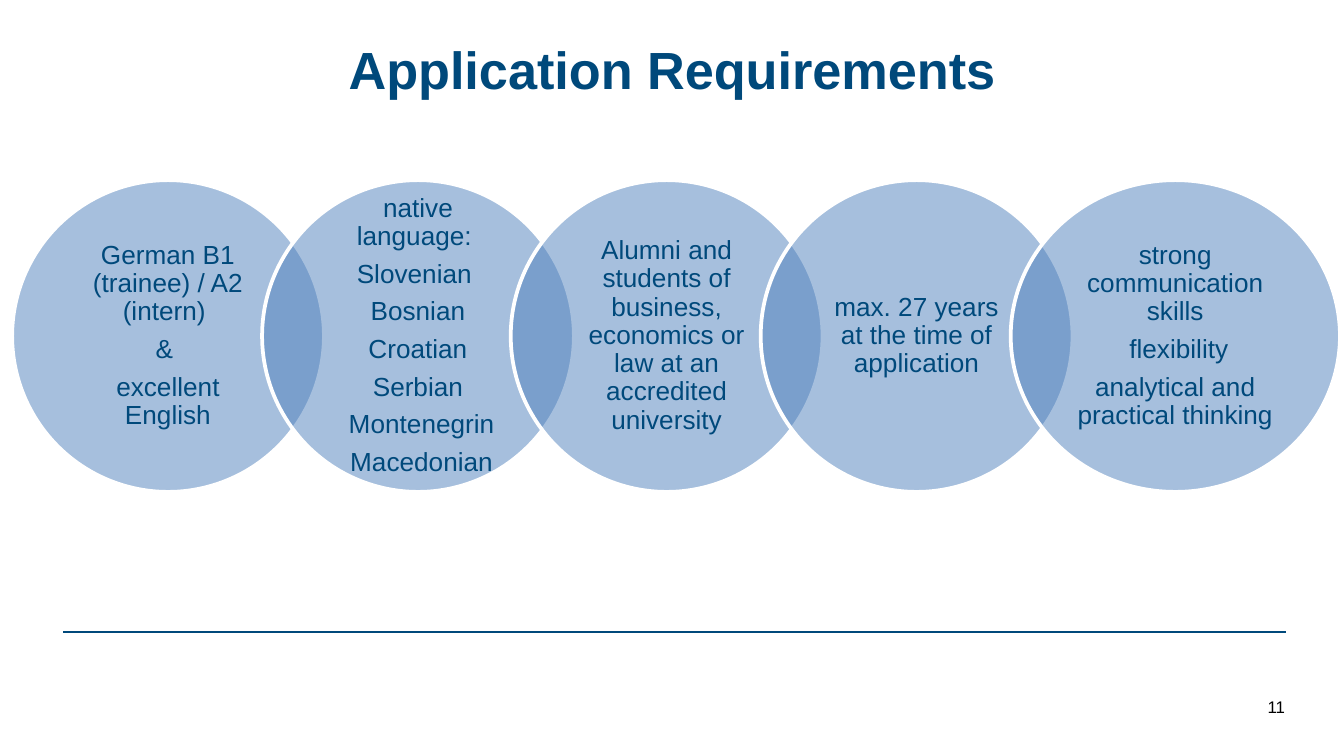
from dataclasses import dataclass

import pptx
import pptx.dml.color
import pptx.enum.shapes
import pptx.enum.text
import pptx.oxml.ns
import pptx.util
from lxml import etree

PX = 9144  # EMU per px, 100 px to the inch
SLIDE_WIDTH = 1000
Align = pptx.enum.text.PP_ALIGN
Anchor = pptx.enum.text.MSO_ANCHOR


@dataclass(frozen=True)
class Theme:
    font: str = "Arial"
    navy: str = "00497B"
    blue: str = "4F81BD"
    white: str = "FFFFFF"
    black: str = "000000"
    title_size: int = 28
    body_size: int = 14
    number_size: int = 9
    circle_opacity: int = 50


@dataclass(frozen=True)
class Box:
    left: int
    top: int
    width: int
    height: int

    def emu(self) -> tuple[int, ...]:
        return tuple(v * PX for v in (self.left, self.top, self.width, self.height))

    def inscribed(self) -> "Box":
        """The rectangle that fits inside the ellipse drawn in this box."""
        dx = round(self.width * (1 - 0.5 ** 0.5) / 2)
        dy = round(self.height * (1 - 0.5 ** 0.5) / 2)
        return Box(self.left + dx, self.top + dy, self.width - 2 * dx, self.height - 2 * dy)


@dataclass(frozen=True)
class Requirement:
    lines: tuple[str, ...]
    width: int = 232


@dataclass(frozen=True)
class TextStyle:
    size: int
    color: str
    align: Align
    anchor: Anchor
    bold: bool = False
    line_spacing: float = 1.0
    space_after: int = 0
    insets: tuple[int, int] = (10, 5)  # sides, top and bottom


THEME = Theme()
TITLE = TextStyle(THEME.title_size, THEME.navy, Align.CENTER, Anchor.TOP, bold=True)
BODY = TextStyle(THEME.body_size, THEME.navy, Align.CENTER, Anchor.MIDDLE,
                 line_spacing=0.9, space_after=5, insets=(13, 2))
NUMBER = TextStyle(THEME.number_size, THEME.black, Align.RIGHT, Anchor.MIDDLE)

REQUIREMENTS = (
    Requirement(("German B1 (trainee) / A2 (intern) ", "& ", "excellent English")),
    Requirement(("native language: ", "Slovenian ", "Bosnian", "Croatian", "Serbian",
                 " Montenegrin", " Macedonian")),
    Requirement(("Alumni and students of business, economics or law at an accredited university",)),
    Requirement(("max. 27 years at the time of application",)),
    Requirement(("strong communication skills", " flexibility",
                 "analytical and practical thinking"), width=245),
)
FIRST_LEFT, CIRCLE_TOP, CIRCLE_HEIGHT, CIRCLE_STEP = 9, 134, 232, 185.75


def rgb(color: str) -> pptx.dml.color.RGBColor:
    return pptx.dml.color.RGBColor.from_string(color)


def apply(target, values: dict) -> None:
    for name, value in values.items():
        setattr(target, name, value)


def add_text(slide, box: Box, lines: tuple[str, ...], style: TextStyle) -> None:
    frame = slide.shapes.add_textbox(*box.emu()).text_frame
    side, edge = (v * PX for v in style.insets)
    apply(frame, {"word_wrap": True, "vertical_anchor": style.anchor,
                  "margin_left": side, "margin_right": side,
                  "margin_top": edge, "margin_bottom": edge})
    for index, line in enumerate(lines):
        paragraph = frame.paragraphs[0] if index == 0 else frame.add_paragraph()
        apply(paragraph, {"alignment": style.align, "line_spacing": style.line_spacing,
                          "space_after": pptx.util.Pt(style.space_after)})
        run = paragraph.add_run()
        run.text = line
        apply(run.font, {"name": THEME.font, "size": pptx.util.Pt(style.size), "bold": style.bold})
        run.font.color.rgb = rgb(style.color)


def add_circle(slide, box: Box) -> None:
    circle = slide.shapes.add_shape(pptx.enum.shapes.MSO_SHAPE.OVAL, *box.emu())
    circle.shadow.inherit = False
    circle.fill.solid()
    circle.fill.fore_color.rgb = rgb(THEME.blue)
    fill_color = circle._element.spPr.find(".//" + pptx.oxml.ns.qn("a:srgbClr"))
    alpha = etree.SubElement(fill_color, pptx.oxml.ns.qn("a:alpha"))
    alpha.set("val", str(THEME.circle_opacity * 1000))
    circle.line.color.rgb = rgb(THEME.white)
    circle.line.width = pptx.util.Pt(2)


def add_rule(slide, left: int, right: int, y: int) -> None:
    rule = slide.shapes.add_connector(pptx.enum.shapes.MSO_CONNECTOR.STRAIGHT,
                                      left * PX, y * PX, right * PX, y * PX)
    rule.line.color.rgb = rgb(THEME.navy)
    rule.line.width = pptx.util.Pt(1)
    etree.SubElement(rule._element.spPr, pptx.oxml.ns.qn("a:effectLst"))


def main() -> None:
    deck = pptx.Presentation()
    apply(deck, {"slide_width": SLIDE_WIDTH * PX, "slide_height": SLIDE_WIDTH * PX * 9 // 16})
    slide = deck.slides.add_slide(deck.slide_layouts[6])

    add_rule(slide, 47, 957, 470)
    add_text(slide, Box(50, 23, 900, 94), ("Application Requirements",), TITLE)
    add_text(slide, Box(902, 511, 64, 30), ("11",), NUMBER)
    for index, requirement in enumerate(REQUIREMENTS):
        left = round(FIRST_LEFT + index * CIRCLE_STEP)
        circle = Box(left, CIRCLE_TOP, requirement.width, CIRCLE_HEIGHT)
        add_circle(slide, circle)
        add_text(slide, circle.inscribed(), requirement.lines, BODY)

    deck.save("out.pptx")


if __name__ == "__main__":
    main()
